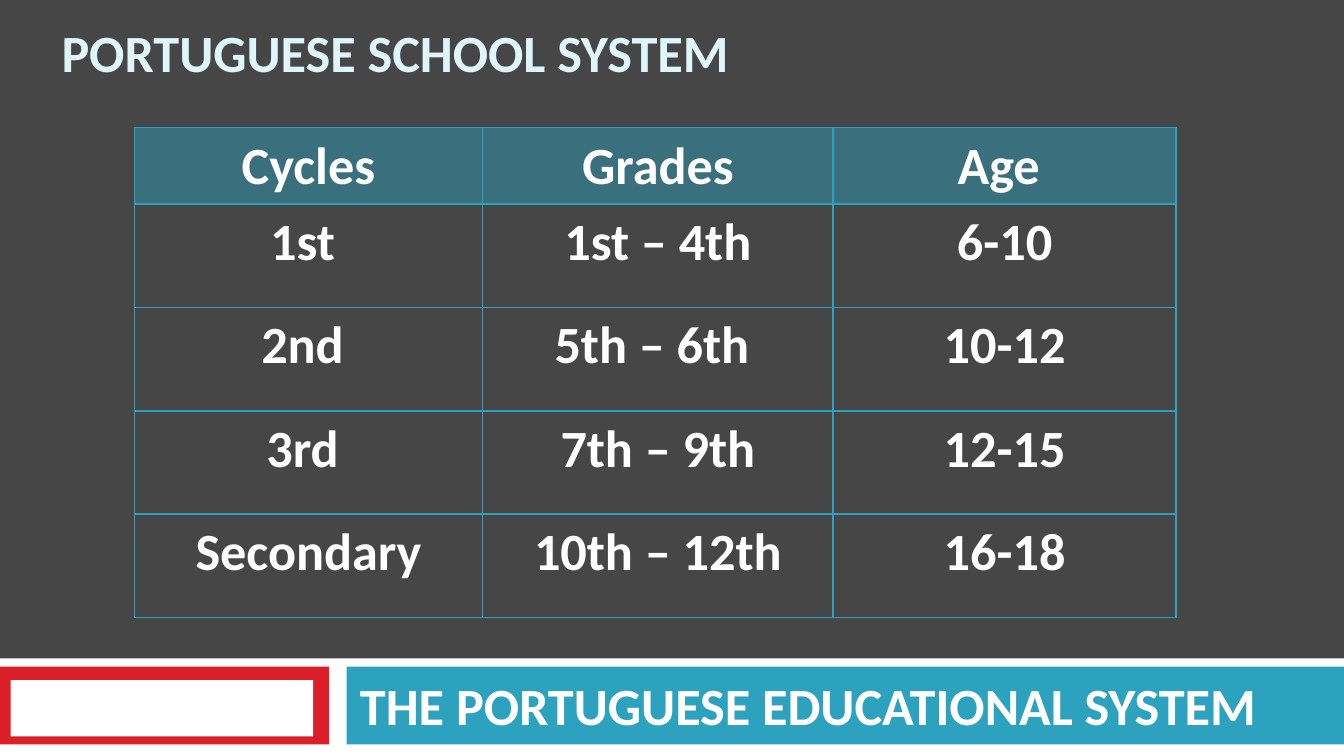
from lxml import etree
from pptx import Presentation
from pptx.dml.color import RGBColor
from pptx.enum.shapes import MSO_SHAPE
from pptx.enum.text import MSO_ANCHOR, PP_ALIGN
from pptx.oxml.ns import qn
from pptx.util import Inches, Pt

RECTANGLE = MSO_SHAPE.RECTANGLE
MIDDLE, BOTTOM = MSO_ANCHOR.MIDDLE, MSO_ANCHOR.BOTTOM
CENTER = PP_ALIGN.CENTER

WHITE, TEAL, RED = "FFFFFF", "2DA2BF", "DA1F28"
BACKGROUND, HEADER, TITLE = "464646", "3A6F7D", "DEF5FA"
COLUMN_WIDTHS = [2.59, 2.61, 2.55]
ROW_HEIGHTS = [0.5] + [0.77] * 4
SCHOOL_ROWS = [
    ["Cycles", "Grades", "Age "],
    ["1st ", "1st – 4th", "6-10"],
    ["2nd ", "5th – 6th ", "10-12"],
    ["3rd ", "7th – 9th", "12-15"],
    ["Secondary", "10th – 12th", "16-18"],
]


def color(value):
    return RGBColor.from_string(value)


def add_span(para, text, fill):
    span = para.add_run()
    span.text = text
    span.font.name = "Calibri"
    span.font.size = Pt(28)
    span.font.bold = True
    span.font.color.rgb = color(fill)


def add_panel(page, left, top, width, height, fill):
    panel = page.shapes.add_shape(
        RECTANGLE, Inches(left), Inches(top), Inches(width), Inches(height))
    panel.shadow.inherit = False
    panel.fill.solid()
    panel.fill.fore_color.rgb = color(fill)
    panel.line.fill.background()


def add_heading(page, left, top, width, height, text, fill, anchor, before=0):
    box = page.shapes.add_textbox(
        Inches(left), Inches(top), Inches(width), Inches(height))
    frame = box.text_frame
    frame.word_wrap = True
    frame.vertical_anchor = anchor
    para = frame.paragraphs[0]
    para.space_before = Pt(before)
    add_span(para, text, fill)


def set_borders(cell, line_color):
    properties = cell._tc.get_or_add_tcPr()
    for position, side in enumerate(("a:lnL", "a:lnR", "a:lnT", "a:lnB")):
        line = etree.Element(qn(side), w=str(Pt(1)))
        fill = etree.SubElement(line, qn("a:solidFill"))
        etree.SubElement(fill, qn("a:srgbClr"), val=line_color)
        properties.insert(position, line)


def add_school_table(page, left, top):
    frame = page.shapes.add_table(
        len(ROW_HEIGHTS), len(COLUMN_WIDTHS), Inches(left), Inches(top),
        Inches(sum(COLUMN_WIDTHS)), Inches(sum(ROW_HEIGHTS)))
    table = frame.table
    table.horz_banding = False
    for column, width in zip(table.columns, COLUMN_WIDTHS):
        column.width = Inches(width)
    for index, (row, height) in enumerate(zip(table.rows, ROW_HEIGHTS)):
        row.height = Inches(height)
        for cell, text in zip(row.cells, SCHOOL_ROWS[index]):
            if index == 0:
                cell.fill.solid()
                cell.fill.fore_color.rgb = color(HEADER)
            else:
                cell.fill.background()
            set_borders(cell, TEAL)
            para = cell.text_frame.paragraphs[0]
            para.alignment = CENTER
            add_span(para, text, WHITE)


def main():
    deck = Presentation()
    deck.slide_width = Inches(10)
    deck.slide_height = deck.slide_width * 9 // 16
    page = deck.slides.add_slide(deck.slide_layouts[6])
    page.background.fill.solid()
    page.background.fill.fore_color.rgb = color(BACKGROUND)

    add_panel(page, 0, 4.9, 10, 0.73, WHITE)
    add_panel(page, -0.01, 4.96, 2.46, 0.58, RED)
    add_panel(page, 2.58, 4.96, 7.42, 0.58, TEAL)
    add_panel(page, 0.08, 5.06, 2.25, 0.42, WHITE)
    add_heading(page, 2.58, 4.96, 7.12, 0.56,
                "THE PORTUGUESE EDUCATIONAL SYSTEM", WHITE, MIDDLE, before=7)
    add_heading(page, 0.36, -0.03, 8.5, 0.7,
                "PORTUGUESE SCHOOL SYSTEM", TITLE, BOTTOM)
    add_school_table(page, 1, 0.95)
    deck.save("out.pptx")


if __name__ == "__main__":
    main()
